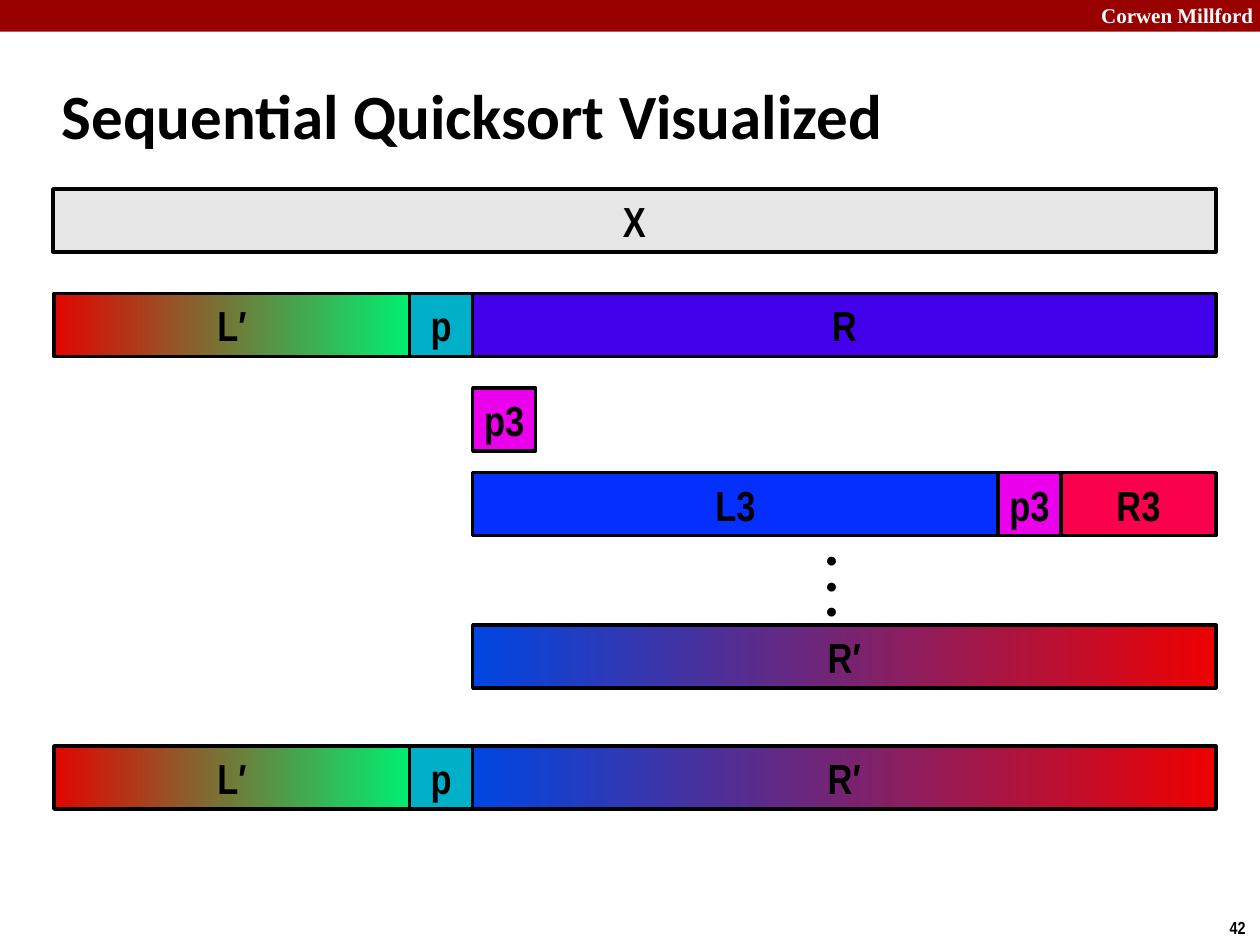
from dataclasses import dataclass

from pptx import Presentation
from pptx.dml.color import RGBColor
from pptx.enum.shapes import MSO_SHAPE as Preset
from pptx.enum.text import MSO_ANCHOR as Anchor, MSO_AUTO_SIZE as AutoSize, PP_ALIGN as Align
from pptx.slide import Slide
from pptx.text.text import TextFrame
from pptx.util import Cm, Pt

COLORS = {
    "black": "000000",
    "white": "FFFFFF",
    "banner": "990000",
    "unsorted": "E6E6E6",
    "pivot": "00B0C8",
    "right": "4300EA",
    "pivot3": "EA00EA",
    "left3": "052FFF",
    "right3": "FA004D",
    "left_start": "E10601",
    "left_end": "00EE71",
    "right_start": "0046E2",
    "right_end": "ED0101",
}
LEFT_SORTED = ("left_start", "left_end")
RIGHT_SORTED = ("right_start", "right_end")

CELL = 1.27
ARRAY_LEFT, ARRAY_RIGHT = 1.09, 24.51
PIVOT_LEFT = 8.26
RIGHT_LEFT = PIVOT_LEFT + CELL
PIVOT3_LEFT = 20.12
RIGHT3_LEFT = PIVOT3_LEFT + CELL


@dataclass(frozen=True)
class Segment:
    label: str
    start: float
    end: float
    colors: tuple[str, ...]


@dataclass(frozen=True)
class Step:
    top: float
    segments: tuple[Segment, ...]


@dataclass(frozen=True)
class Caption:
    lines: tuple[str, ...]
    left: float
    top: float
    width: float
    height: float
    font: str
    size: int
    color: str = "black"


LEFT_DONE = Segment("L′", ARRAY_LEFT, PIVOT_LEFT, LEFT_SORTED)
PIVOT = Segment("p", PIVOT_LEFT, RIGHT_LEFT, ("pivot",))
RIGHT_DONE = Segment("R′", RIGHT_LEFT, ARRAY_RIGHT, RIGHT_SORTED)

STEPS = (
    Step(3.81, (Segment("X", 1.07, ARRAY_RIGHT, ("unsorted",)),)),
    Step(5.92, (LEFT_DONE, PIVOT, Segment("R", RIGHT_LEFT, ARRAY_RIGHT, ("right",)))),
    Step(7.82, (Segment("p3", RIGHT_LEFT, RIGHT_LEFT + CELL, ("pivot3",)),)),
    Step(9.53, (
        Segment("L3", RIGHT_LEFT, PIVOT3_LEFT, ("left3",)),
        Segment("p3", PIVOT3_LEFT, RIGHT3_LEFT, ("pivot3",)),
        Segment("R3", RIGHT3_LEFT, ARRAY_RIGHT, ("right3",)),
    )),
    Step(12.6, (RIGHT_DONE,)),
    Step(15.04, (LEFT_DONE, PIVOT, RIGHT_DONE)),
)

CAPTIONS = (
    Caption(("Corwen Millford",), 21.95, -0.08, 3.63, 0.76, "Times New Roman", 12, "white"),
    Caption(("42",), 24.54, 18.36, 0.86, 0.69, "Arial Narrow", 10),
    Caption(("•",) * 3, 16.41, 10.9, 0.71, 1.8, "Calibri", 12),
)


def rgb(name: str) -> RGBColor:
    return RGBColor.from_string(COLORS[name])


def format_text(frame: TextFrame, font: str, size: int, color: str, align: Align) -> None:
    for paragraph in frame.paragraphs:
        paragraph.alignment = align
        for run in paragraph.runs:
            run.font.name = font
            run.font.size = Pt(size)
            run.font.bold = True
            run.font.color.rgb = rgb(color)


def draw_banner(slide: Slide) -> None:
    banner = slide.shapes.add_shape(Preset.RECTANGLE, 0, 0, Cm(25.4), Cm(0.64))
    banner.shadow.inherit = False
    banner.fill.solid()
    banner.fill.fore_color.rgb = rgb("banner")
    banner.line.fill.background()


def draw_title(slide: Slide) -> None:
    title = slide.shapes.title
    title.left, title.top, title.width, title.height = Cm(0.99), Cm(1.24), Cm(21.08), Cm(2.11)
    frame = title.text_frame
    frame.text = "Sequential Quicksort Visualized"
    frame.auto_size = AutoSize.NONE
    frame.vertical_anchor = Anchor.MIDDLE
    format_text(frame, "Calibri", 36, "black", Align.LEFT)


def draw_segment(slide: Slide, segment: Segment, top: float) -> None:
    bar = slide.shapes.add_shape(
        Preset.RECTANGLE, Cm(segment.start), Cm(top), Cm(segment.end - segment.start), Cm(CELL)
    )
    bar.shadow.inherit = False
    if len(segment.colors) == 1:
        bar.fill.solid()
        bar.fill.fore_color.rgb = rgb(segment.colors[0])
    else:
        bar.fill.gradient()
        bar.fill.gradient_angle = 0
        for stop, color in zip(bar.fill.gradient_stops, segment.colors):
            stop.color.rgb = rgb(color)
    bar.line.color.rgb = rgb("black")
    bar.line.width = Pt(2)
    frame = bar.text_frame
    frame.text = segment.label
    frame.word_wrap = False
    frame.vertical_anchor = Anchor.MIDDLE
    format_text(frame, "Arial Narrow", 24, "black", Align.CENTER)


def draw_caption(slide: Slide, caption: Caption) -> None:
    box = slide.shapes.add_textbox(
        Cm(caption.left), Cm(caption.top), Cm(caption.width), Cm(caption.height)
    )
    frame = box.text_frame
    frame.text = "\n".join(caption.lines)
    frame.word_wrap = False
    format_text(frame, caption.font, caption.size, caption.color, Align.LEFT)


def main() -> None:
    deck = Presentation()
    deck.slide_width, deck.slide_height = Cm(25.4), Cm(19.05)
    slide = deck.slides.add_slide(deck.slide_layouts[5])
    draw_banner(slide)
    draw_title(slide)
    for step in STEPS:
        for segment in step.segments:
            draw_segment(slide, segment, step.top)
    for caption in CAPTIONS:
        draw_caption(slide, caption)
    deck.save("out.pptx")


if __name__ == "__main__":
    main()
